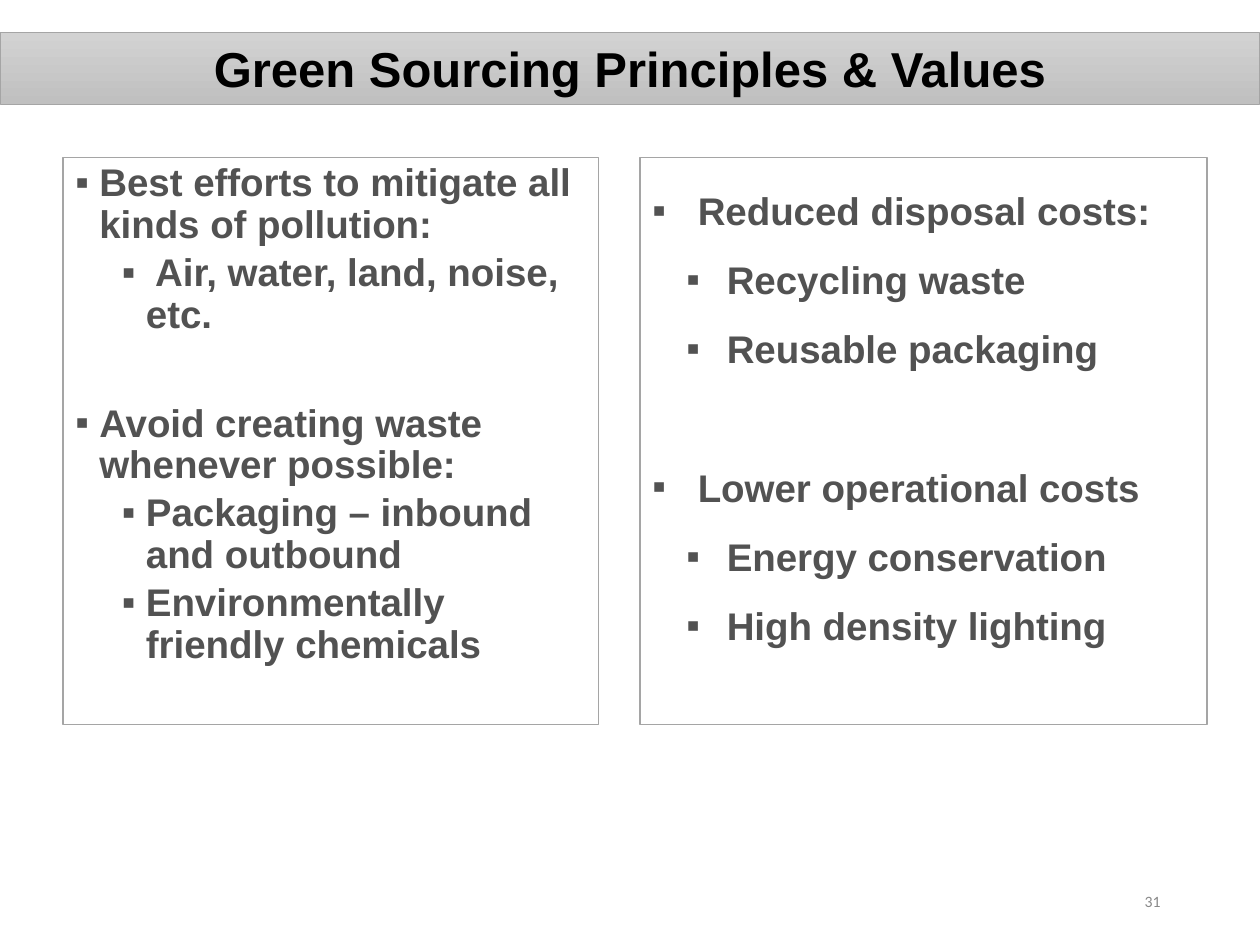
import pptx
import pptx.util
import pptx.dml.color
import pptx.enum.shapes
import pptx.enum.text
import pptx.oxml.ns
from lxml import etree
from pptx.util import Inches, Pt

TITLE = "Green Sourcing Principles & Values"
PAGE_NUMBER = "31"
GREY, BORDER, WHITE = "525252", "A5A5A5", "FFFFFF"

PANELS = [
    {
        "left": 0.5, "width": 4.25, "spacing": 0.9,
        "before": (7.5, 3.8), "group_gap": 38.5,
        "margins": (0.19, 0.56), "hangs": (0.19, 0.19),
        "groups": [
            ("Best efforts to mitigate all kinds of pollution:",
             [" Air, water, land, noise, etc."]),
            ("Avoid creating waste whenever possible:",
             ["Packaging – inbound and outbound",
              "Environmentally friendly chemicals"]),
        ],
    },
    {
        "left": 5.08, "width": 4.5, "spacing": 1.5,
        "before": (0, 0), "group_gap": 39.5,
        "margins": (0.36, 0.59), "hangs": (0.36, 0.32),
        "groups": [
            ("Reduced disposal costs:",
             ["Recycling waste", "Reusable packaging"]),
            ("Lower operational costs",
             ["Energy conservation", "High density lighting"]),
        ],
    },
]


def color(value):
    return pptx.dml.color.RGBColor.from_string(value)


def style(para, name, size, value, bold=False):
    for span in para.runs:
        span.font.name = name
        span.font.size = Pt(size)
        span.font.bold = bold
        span.font.color.rgb = color(value)


def add_box(page, left, top, width, height, line_width):
    box = page.shapes.add_shape(
        pptx.enum.shapes.MSO_SHAPE.RECTANGLE,
        Inches(left), Inches(top), Inches(width), Inches(height))
    box.shadow.inherit = False
    box.line.color.rgb = color(BORDER)
    box.line.width = Pt(line_width)
    box.text_frame.word_wrap = True
    box.text_frame.vertical_anchor = pptx.enum.text.MSO_ANCHOR.TOP
    return box


def add_bullet(para, margin, hang):
    properties = para._p.get_or_add_pPr()
    properties.set("marL", str(Inches(margin)))
    properties.set("indent", str(-Inches(hang)))
    bullet_color = etree.SubElement(properties, pptx.oxml.ns.qn("a:buClr"))
    etree.SubElement(bullet_color, pptx.oxml.ns.qn("a:srgbClr"), val=GREY)
    etree.SubElement(properties, pptx.oxml.ns.qn("a:buFont"), typeface="Arial")
    etree.SubElement(properties, pptx.oxml.ns.qn("a:buChar"), char="▪")


def add_panel(page, panel):
    box = add_box(page, panel["left"], 1.25, panel["width"], 4.5, 1)
    box.fill.solid()
    box.fill.fore_color.rgb = color(WHITE)
    frame = box.text_frame
    for group_index, (heading, details) in enumerate(panel["groups"]):
        for index, text in enumerate([heading] + details):
            level = min(index, 1)
            first = group_index == 0 and index == 0
            para = frame.paragraphs[0] if first else frame.add_paragraph()
            para.text = text
            para.level = level
            para.alignment = pptx.enum.text.PP_ALIGN.LEFT
            add_bullet(para, panel["margins"][level], panel["hangs"][level])
            para.line_spacing = panel["spacing"]
            if not first:
                before = panel["before"][level] if index else panel["group_gap"]
                para.space_before = Pt(before)
            style(para, "Arial", 22, GREY, True)


def add_title(page):
    box = add_box(page, 0, 0.26, 10, 0.57, 0.5)
    box.fill.gradient()
    box.fill.gradient_angle = 270
    for stop, position, value in zip(
            box.fill.gradient_stops, (0, 1), ("D2D2D2", "C0C0C0")):
        stop.position = position
        stop.color.rgb = color(value)
    para = box.text_frame.paragraphs[0]
    para.text = TITLE
    para.alignment = pptx.enum.text.PP_ALIGN.CENTER
    style(para, "Arial", 28, "000000", True)


def add_page_number(page):
    box = page.shapes.add_textbox(
        Inches(7.06), Inches(6.95), Inches(2.25), Inches(0.4))
    box.text_frame.word_wrap = True
    box.text_frame.vertical_anchor = pptx.enum.text.MSO_ANCHOR.MIDDLE
    para = box.text_frame.paragraphs[0]
    para.text = PAGE_NUMBER
    para.alignment = pptx.enum.text.PP_ALIGN.RIGHT
    style(para, "Calibri", 9, "898989")


def main():
    deck = pptx.Presentation()
    deck.slide_width, deck.slide_height = Inches(10), Inches(7.5)
    page = deck.slides.add_slide(deck.slide_layouts[6])
    add_title(page)
    for panel in PANELS:
        add_panel(page, panel)
    add_page_number(page)
    deck.save("out.pptx")


if __name__ == "__main__":
    main()
